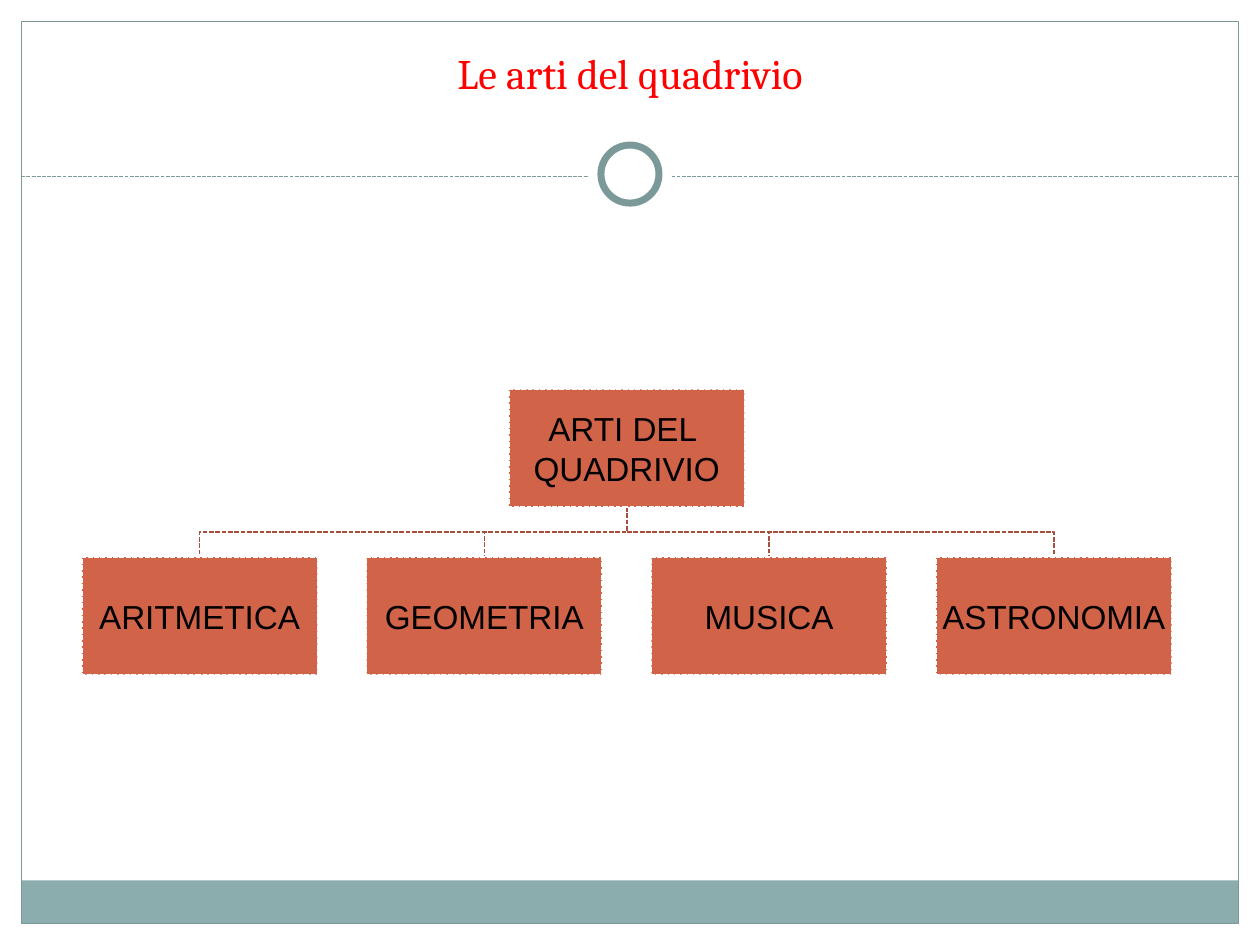
from pptx import Presentation
from pptx.dml.color import RGBColor
from pptx.enum import dml, shapes, text
from pptx.util import Cm, Pt

TITLE = "Le arti del quadrivio"
ROOT = "ARTI DEL \nQUADRIVIO"
ARTS = ["ARITMETICA", "GEOMETRIA", "MUSICA", "ASTRONOMIA"]

WHITE = RGBColor(0xFF, 0xFF, 0xFF)
BLACK = RGBColor(0, 0, 0)
RED = RGBColor(0xFF, 0, 0)
TEAL = RGBColor(0x7C, 0x99, 0x9A)
BAND = RGBColor(0x8C, 0xAD, 0xAE)
BRICK = RGBColor(0xD1, 0x63, 0x49)
BROWN = RGBColor(0xA7, 0x4F, 0x3A)

# All lengths below are in centimetres.
PAGE_W, PAGE_H = 25.4, 19.05
MARGIN = 0.43
RULE_Y = 3.56
RING_Y = 3.51
BOX_W, BOX_H = 4.75, 2.37
FIRST_LEFT, PITCH = 1.65, 5.74
ROOT_TOP, ARTS_TOP = 7.85, 11.23

RECT = shapes.MSO_SHAPE.RECTANGLE
OVAL = shapes.MSO_SHAPE.OVAL
DASH = dml.MSO_LINE.SQUARE_DOT


def set_line(line, color, width, dash=None):
    formats = {"width": Pt(width), "dash_style": dash}
    for name, value in formats.items():
        setattr(line, name, value)
    line.color.rgb = color


def style(shape, fill=None, line=None):
    """Fill and outline a shape; line is (color, width[, dash])."""
    shape.shadow.inherit = False
    if fill is None:
        shape.fill.background()
    else:
        shape.fill.solid()
        shape.fill.fore_color.rgb = fill
    if line is None:
        shape.line.fill.background()
    else:
        set_line(shape.line, *line)
    return shape


def add_shape(page, kind, left, top, width, height, fill=None, line=None):
    shape = page.shapes.add_shape(kind, Cm(left), Cm(top), Cm(width), Cm(height))
    return style(shape, fill, line)


def write(shape, words, font, size, color, anchor, inset):
    frame = shape.text_frame
    frame.text = words
    formats = {"word_wrap": True, "auto_size": text.MSO_AUTO_SIZE.NONE,
               "vertical_anchor": anchor}
    for side in ("left", "right", "top", "bottom"):
        formats["margin_" + side] = Cm(inset)
    for name, value in formats.items():
        setattr(frame, name, value)
    for para in frame.paragraphs:
        para.alignment = text.PP_ALIGN.CENTER
        for span in para.runs:
            for name, value in {"name": font, "size": Pt(size), "bold": False}.items():
                setattr(span.font, name, value)
            span.font.color.rgb = color


def add_decoration(page):
    inner_w = PAGE_W - 2 * MARGIN
    add_shape(page, RECT, MARGIN, 17.75, inner_w, 0.86, BAND)
    add_shape(page, RECT, MARGIN, MARGIN, inner_w, PAGE_H - 2 * MARGIN, None, (TEAL, 0.75))
    rule = page.shapes.add_connector(
        shapes.MSO_CONNECTOR.STRAIGHT, Cm(MARGIN), Cm(RULE_Y), Cm(PAGE_W - MARGIN), Cm(RULE_Y))
    set_line(rule.line, TEAL, 0.75, DASH)
    properties = rule._element.spPr
    properties.append(properties.makeelement(
        "{http://schemas.openxmlformats.org/drawingml/2006/main}effectLst", {}))
    for size, line in ((1.7, None), (1.17, (TEAL, 4))):
        add_shape(page, OVAL, (PAGE_W - size) / 2, RING_Y - size / 2, size, size, WHITE, line)


def add_branch(page, start_x, start_y, end_x, end_y):
    middle = (start_y + end_y) / 2
    builder = page.shapes.build_freeform(Cm(start_x), Cm(start_y))
    corners = [(start_x, middle), (end_x, middle), (end_x, end_y)]
    builder.add_line_segments([(Cm(x), Cm(y)) for x, y in corners], close=False)
    style(builder.convert_to_shape(), None, (BROWN, 0.9, DASH))


def add_tree(page):
    lefts = [FIRST_LEFT + i * PITCH for i in range(len(ARTS))]
    root_left = (lefts[0] + lefts[-1]) / 2
    for left in reversed(lefts):
        add_branch(page, root_left + BOX_W / 2, ROOT_TOP + BOX_H, left + BOX_W / 2, ARTS_TOP)
    boxes = [(ROOT, root_left, ROOT_TOP)]
    boxes += [(art, left, ARTS_TOP) for art, left in zip(ARTS, lefts)]
    for words, left, top in boxes:
        box = add_shape(page, RECT, left, top, BOX_W, BOX_H, BRICK, (WHITE, 0.9, DASH))
        write(box, words, "Arial", 19, BLACK, text.MSO_ANCHOR.MIDDLE, 0.03)


def main():
    deck = Presentation()
    deck.slide_width, deck.slide_height = Cm(PAGE_W), Cm(PAGE_H)
    page = deck.slides.add_slide(deck.slide_layouts.get_by_name("Title Only"))
    title = page.shapes.title
    place = {"left": 1.27, "top": 0.76, "width": 22.86, "height": 1.35}
    for name, value in place.items():
        setattr(title, name, Cm(value))
    write(title, TITLE, "Cambria", 24, RED, text.MSO_ANCHOR.BOTTOM, 0.13)
    add_decoration(page)
    add_tree(page)
    deck.save("out.pptx")


if __name__ == "__main__":
    main()
